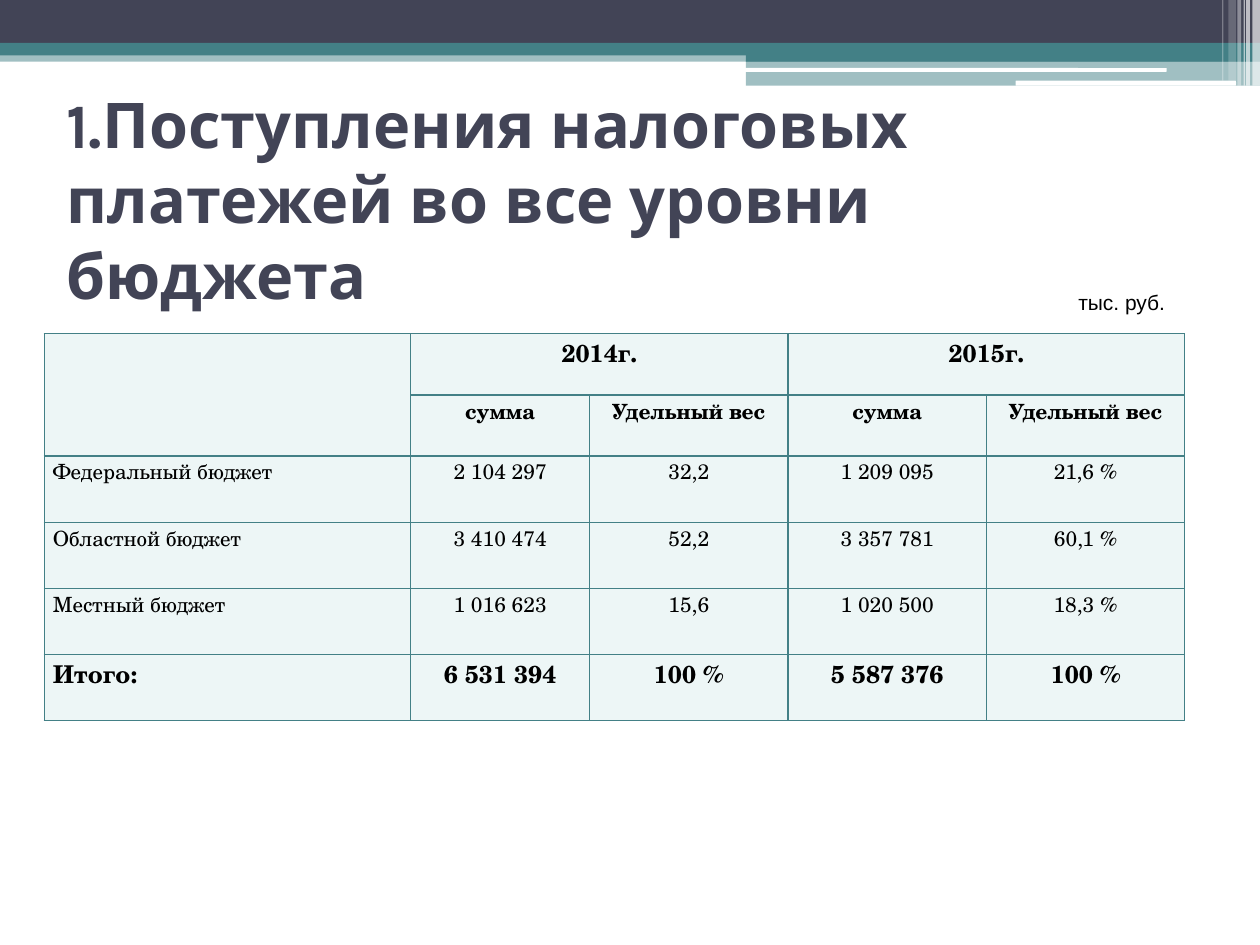
import pptx
import pptx.util
import pptx.dml.color
import pptx.enum.shapes
import pptx.enum.text
import pptx.oxml
import pptx.oxml.ns

HUES = {"dark": "424456", "teal": "438086", "white": "FFFFFF",
        "pale": "EDF6F6", "black": "000000"}
COLS, ROWS = 100, 75
SERIF = "TeX Gyre Schola"
ALIGN = pptx.enum.text.PP_ALIGN
KIND = pptx.enum.shapes.MSO_SHAPE
MID = pptx.enum.text.MSO_ANCHOR.MIDDLE


class Deck:
    """Holds the style and the current slide; lengths are grid columns and rows."""

    def __init__(self):
        self.file = pptx.Presentation()
        self.file.slide_width = pptx.util.Inches(10)
        self.file.slide_height = pptx.util.Inches(7.5)
        self.slide = self.file.slides.add_slide(self.file.slide_layouts[6])
        self.shapes = self.slide.shapes

    def wide(self, cols):
        return int(self.file.slide_width * cols / COLS)

    def high(self, rows):
        return int(self.file.slide_height * rows / ROWS)

    def box(self, x, y, w, h):
        return self.wide(x), self.high(y), self.wide(w), self.high(h)

    def hue(self, name):
        return pptx.dml.color.RGBColor.from_string(HUES[name])

    def bar(self, place, hue, alpha=100, kind=KIND.RECTANGLE):
        shape = self.shapes.add_shape(kind, *self.box(*place))
        shape.shadow.inherit = False
        shape.line.fill.background()
        shape.fill.solid()
        shape.fill.fore_color.rgb = self.hue(hue)
        if alpha < 100:
            tone = shape.element.spPr.find(".//" + pptx.oxml.ns.qn("a:srgbClr"))
            tone.append(pptx.oxml.parse_xml(
                f'<a:alpha {pptx.oxml.ns.nsdecls("a")} val="{alpha * 1000}"/>'))

    def words(self, frame, text, hue, align=ALIGN.LEFT, **form):
        para = frame.paragraphs[0]
        para.alignment = align
        run = para.add_run()
        run.text = text
        run.font.color.rgb = self.hue(hue)
        for key, value in form.items():
            setattr(run.font, key, value)

    def text(self, place, text, hue, wrap=True, **form):
        frame = self.shapes.add_textbox(*self.box(*place)).text_frame
        frame.word_wrap = wrap
        frame.vertical_anchor = MID
        self.words(frame, text, hue, **form)

    def edge(self, cell, side, width):
        cell._tc.get_or_add_tcPr().append(pptx.oxml.parse_xml(
            f'<a:ln{side} {pptx.oxml.ns.nsdecls("a")} w="{pptx.util.Pt(width)}">'
            f'<a:solidFill><a:srgbClr val="{HUES["teal"]}"/></a:solidFill>'
            f'</a:ln{side}>'))

    def table(self, x, y, cols, rows, data, spans, head, big):
        """Rows above head are headings; rows in big get larger bold text."""
        place = self.box(x, y, sum(cols), sum(rows))
        grid = self.shapes.add_table(len(rows), len(cols), *place).table
        grid.first_row = grid.horz_banding = False
        for col, size in zip(grid.columns, cols):
            col.width = self.wide(size)
        for row, size in zip(grid.rows, rows):
            row.height = self.high(size)
        pad = self.wide(0.7)
        form = {"margin_left": pad, "margin_right": pad,
                "margin_top": 0, "margin_bottom": 0}
        for r, line in enumerate(data):
            for c, text in enumerate(line):
                cell = grid.cell(r, c)
                for key, value in form.items():
                    setattr(cell, key, value)
                for side in "LRTB":
                    thick = (side, r) in (("B", head - 1), ("T", head))
                    self.edge(cell, side, 1.5 if thick else 0.75)
                cell.fill.solid()
                cell.fill.fore_color.rgb = self.hue("pale")
                if text:
                    self.words(cell.text_frame, text, "black",
                               ALIGN.CENTER if c else ALIGN.LEFT, name=SERIF,
                               size=pptx.util.Pt(14 if r in big else 12),
                               bold=r < head or r in big)
        for first, last in spans:
            grid.cell(*first).merge(grid.cell(*last))


BANDS = [
    ((0, 4, 100, 0.9), "teal", 50),
    ((0, 0, 100, 3.4), "dark"),
    ((0, 3.4, 100, 1), "teal"),
    ((59.2, 3.9, 40.8, 1), "teal"),
    ((59.2, 4.8, 40.8, 2), "teal", 50),
    ((59.1, 5.4, 33.5, 0.3), "white", 100, KIND.ROUNDED_RECTANGLE),
    ((80.6, 6.4, 17.5, 0.4), "white", 100, KIND.ROUNDED_RECTANGLE),
]
# left, width, height, opacity
STRIPES = [(99.4, 0.6, 6.8, 65), (98.9, 0.3, 6.8, 65), (98.7, 0.1, 6.8, 60),
           (98.2, 0.3, 6.8, 40), (97.5, 0.6, 6.4, 20), (97, 0.1, 6.4, 30)]
DATA = [
    ["", "2014г.", "", "2015г.", ""],
    ["", "сумма", "Удельный вес", "сумма", "Удельный вес"],
    ["Федеральный бюджет", "2 104 297", "32,2", "1 209 095", "21,6 %"],
    ["Областной бюджет", "3 410 474", "52,2", "3 357 781", "60,1 %"],
    ["Местный бюджет", "1 016 623", "15,6", "1 020 500", "18,3 %"],
    ["Итого:", "6 531 394", "100 %", "5 587 376", "100 %"],
]
SPANS = [((0, 0), (1, 0)), ((0, 1), (0, 2)), ((0, 3), (0, 4))]


def main():
    deck = Deck()
    for band in BANDS:
        deck.bar(*band)
    for x, w, h, alpha in STRIPES:
        deck.bar((x, 0, w, h), "white", alpha)
    deck.text((4.3, 9.9, 90, 11.7),
              "1.Поступления налоговых платежей во все уровни бюджета", "dark",
              name="Karla", size=pptx.util.Pt(36), bold=True)
    deck.table(3.5, 26.5, [29.1, 14.2] + [15.75] * 3, [4.85] * 2 + [5.25] * 4,
               DATA, SPANS, head=2, big=(0, 5))
    deck.text((84.6, 22.5, 9, 3), "тыс. руб.", "black", wrap=False,
              name="Arial", size=pptx.util.Pt(12))
    deck.file.save("out.pptx")


if __name__ == "__main__":
    main()
